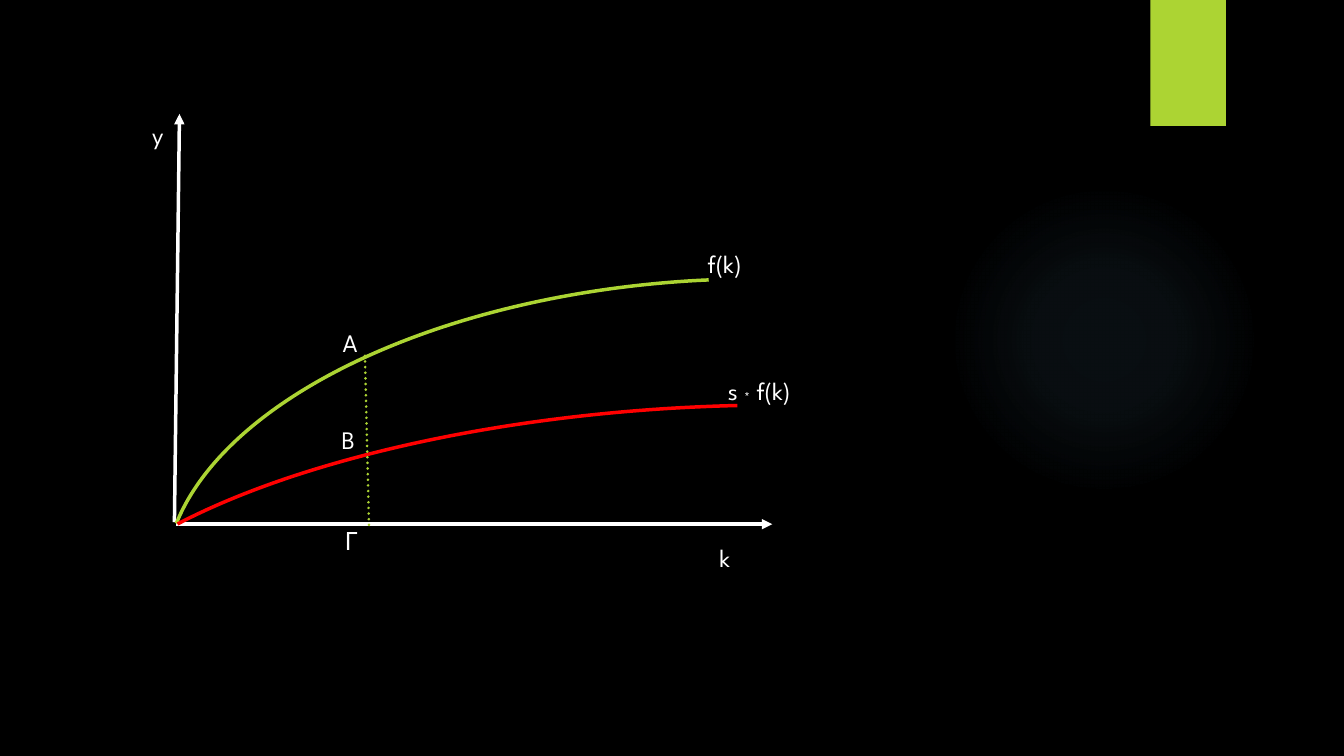
from lxml.etree import SubElement
from pptx import Presentation
from pptx.dml.color import RGBColor
from pptx.enum.dml import MSO_LINE
from pptx.enum.shapes import MSO_CONNECTOR, MSO_SHAPE
from pptx.enum.text import MSO_AUTO_SIZE, PP_ALIGN
from pptx.oxml import parse_xml
from pptx.oxml.ns import nsdecls, qn
from pptx.util import Inches, Pt

COLORS = {"background": "000000", "text": "FFFFFF", "axis": "FFFFFF",
          "output": "ACD433", "saving": "FF0000", "glow": "7AC4F0", "shadow": "000000"}
FONT = "League Spartan"

GLOW = (9.41, 1.83, 3.08, 3.08)
GLOW_STOPS = [(0, 7), (36, 6), (69, 0)]
TAB = (11.41, 0, 0.75, 1.25)

AXES = [((1.78, 1.13), (1.73, 5.18)), ((7.66, 5.2), (1.75, 5.2))]
DROP_LINE = ((3.62, 3.53), (3.66, 5.21))
CURVE_ROTATION = 266.6
CURVES = [
    ("output", (4.3, 0.11, 5.47, 10.81), (166.13, 1.97)),
    ("saving", (4.56, -0.05, 4.51, 12.7), (171.42, 9.45)),
]
LABELS = [
    (["s ", "*", " f(k)"], (7.12, 3.67, 1.08), PP_ALIGN.LEFT),
    (["y"], (1.22, 1.13, 0.5), PP_ALIGN.RIGHT),
    (["k"], (6.83, 5.33, 0.51), PP_ALIGN.RIGHT),
    (["f(k)"], (6.92, 2.41, 0.85), PP_ALIGN.LEFT),
    (["A"], (3.3, 3.2, 0.34), PP_ALIGN.LEFT),
    (["B"], (3.29, 4.16, 0.34), PP_ALIGN.LEFT),
    (["Γ"], (3.32, 5.16, 0.34), PP_ALIGN.LEFT),
]
LABEL_HEIGHT = 0.4


def rgb(role):
    return RGBColor.from_string(COLORS[role])


def add_plain_shape(slide, preset, box):
    shape = slide.shapes.add_shape(preset, *map(Inches, box))
    shape.shadow.inherit = False
    shape.line.fill.background()
    return shape


def add_glow(slide):
    glow = add_plain_shape(slide, MSO_SHAPE.OVAL, GLOW)
    stops = "".join(
        f'<a:gs pos="{position * 1000}"><a:srgbClr val="{COLORS["glow"]}">'
        f'<a:alpha val="{alpha * 1000}"/></a:srgbClr></a:gs>'
        for position, alpha in GLOW_STOPS)
    gradient = parse_xml(
        f'<a:gradFill {nsdecls("a")} rotWithShape="1"><a:gsLst>{stops}</a:gsLst>'
        '<a:path path="circle"><a:fillToRect l="50000" t="50000" r="50000" b="50000"/>'
        '</a:path></a:gradFill>')
    glow._element.spPr.find(qn("a:prstGeom")).addnext(gradient)


def add_tab(slide):
    tab = add_plain_shape(slide, MSO_SHAPE.RECTANGLE, TAB)
    tab.fill.solid()
    tab.fill.fore_color.rgb = rgb("output")
    effects = tab._element.spPr.find(qn("a:effectLst"))
    effects.append(parse_xml(
        f'<a:outerShdw {nsdecls("a")} blurRad="{Pt(3)}" dist="{Pt(2)}" dir="5400000" '
        f'rotWithShape="0"><a:srgbClr val="{COLORS["shadow"]}"><a:alpha val="45000"/>'
        '</a:srgbClr></a:outerShdw>'))


def add_line(slide, ends, role, width):
    start, end = ends
    line = slide.shapes.add_connector(MSO_CONNECTOR.STRAIGHT, *map(Inches, start + end))
    line.line.color.rgb = rgb(role)
    line.line.width = Pt(width)
    SubElement(line._element.spPr, qn("a:effectLst"))
    return line


def add_axis(slide, ends):
    axis = add_line(slide, ends, "axis", 2.5)
    SubElement(axis.line._get_or_add_ln(), qn("a:headEnd")).set("type", "triangle")


def add_drop_line(slide):
    drop = add_line(slide, DROP_LINE, "output", 2)
    drop.line.dash_style = MSO_LINE.ROUND_DOT
    drop.line._get_or_add_ln().set("cap", "rnd")


def add_curve(slide, role, box, arc_limits):
    curve = add_plain_shape(slide, MSO_SHAPE.ARC, box)
    curve.rotation = CURVE_ROTATION
    for index, limit in enumerate(arc_limits):
        curve.adjustments[index] = limit
    curve.fill.background()
    curve.line.color.rgb = rgb(role)
    curve.line.width = Pt(2.5)


def add_label(slide, parts, place, alignment):
    label = slide.shapes.add_textbox(*map(Inches, place + (LABEL_HEIGHT,)))
    frame = label.text_frame
    frame.word_wrap = True
    frame.auto_size = MSO_AUTO_SIZE.SHAPE_TO_FIT_TEXT
    paragraph = frame.paragraphs[0]
    paragraph.alignment = alignment
    paragraph.font.name = FONT
    paragraph.font.size = Pt(18)
    paragraph.font.color.rgb = rgb("text")
    for part in parts:
        run = paragraph.add_run()
        run.text = part
        if part == "*":
            run._r.get_or_add_rPr().set("baseline", "-10000")


def main():
    """Build the slide with the output and saving curves."""
    deck = Presentation()
    deck.slide_width, deck.slide_height = Inches(13.33), Inches(7.5)
    slide = deck.slides.add_slide(deck.slide_layouts[6])
    slide.background.fill.solid()
    slide.background.fill.fore_color.rgb = rgb("background")
    add_glow(slide)
    add_tab(slide)
    for axis_ends in AXES:
        add_axis(slide, axis_ends)
    for curve in CURVES:
        add_curve(slide, *curve)
    add_drop_line(slide)
    for label in LABELS:
        add_label(slide, *label)
    deck.save("out.pptx")


if __name__ == "__main__":
    main()
